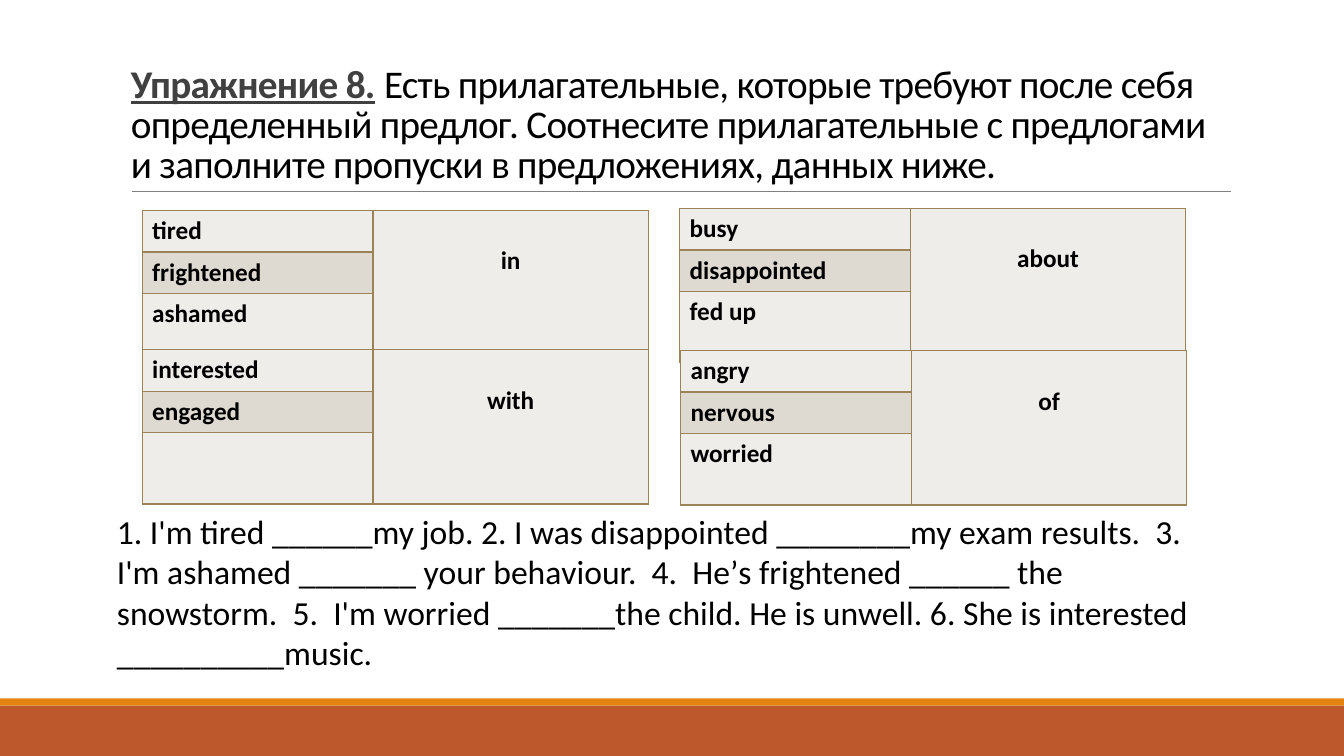
from lxml import etree
from pptx import Presentation
from pptx.dml.color import RGBColor
from pptx.enum import shapes, text
from pptx.oxml import ns
from pptx.util import Inches, Pt

# Content
HEADING = [
    ("Упражнение 8.", {"bold": True, "underline": True}, "404040"),
    (" ", {}, "404040"),
    ("Есть прилагательные, которые требуют после себя определенный предлог. "
     "Соотнесите прилагательные с предлогами и заполните пропуски в "
     "предложениях, данных ниже.", {}, "000000"),
]
SENTENCES = (
    "1. I'm tired ______my job. 2. I was disappointed ________my ехаm results.  3.  "
    "I'm ashamed _______ уоur bеhаviоur.  4.  Не’s frightened ______ the snowstorm.  "
    "5.  I'm worried _______the child. Hе is unwell. 6. Shе is interested __________music."
)
# Left, top, adjectives, preposition
GROUPS = [
    (1.41, 2.09, ["tired", "frightened", "ashamed"], "in"),
    (6.74, 2.07, ["busy", "disappointed", "fed up"], "about"),
    (6.75, 3.48, ["angry", "nеrvоus", "worried"], "of"),
    (1.41, 3.47, ["interested", "engaged", ""], "with"),
]
COLUMNS = [2.29, 2.73]
ROWS = [0.41, 0.41, 0.71]
BANDS = ["EFEDEA", "DED9D1", "EFEDEA"]
BORDER = "9B8357"
# Top, height, colour
FOOTER = [(7, 0.5, "BD582C"), (6.93, 0.07, "E48312")]


def color(value):
    return RGBColor.from_string(value)


def add_run(paragraph, words, size, shade="000000", **formats):
    run = paragraph.add_run()
    run.text = words
    formats = {"name": "Calibri", "size": Pt(size), **formats}
    for key, value in formats.items():
        setattr(run.font, key, value)
    run.font.color.rgb = color(shade)
    return run


def add_frame(left, top, width, height, **formats):
    box = slide.shapes.add_textbox(*map(Inches, (left, top, width, height)))
    for key, value in {"word_wrap": True, **formats}.items():
        setattr(box.text_frame, key, value)
    return box.text_frame.paragraphs[0]


def style_cell(cell, fill):
    properties = cell._tc.get_or_add_tcPr()
    for side in ("a:lnL", "a:lnR", "a:lnT", "a:lnB"):
        line = etree.SubElement(properties, ns.qn(side), w=str(Pt(1)))
        solid = etree.SubElement(line, ns.qn("a:solidFill"))
        etree.SubElement(solid, ns.qn("a:srgbClr"), val=BORDER)
    cell.fill.solid()
    cell.fill.fore_color.rgb = color(fill)


def add_group(left, top, adjectives, preposition):
    table = slide.shapes.add_table(
        len(ROWS), len(COLUMNS), Inches(left), Inches(top),
        Inches(sum(COLUMNS)), Inches(sum(ROWS))).table
    table.first_row = table.horz_banding = False
    for column, width in zip(table.columns, COLUMNS):
        column.width = Inches(width)
    for index, (adjective, height, band) in enumerate(zip(adjectives, ROWS, BANDS)):
        table.rows[index].height = Inches(height)
        style_cell(table.cell(index, 0), band)
        style_cell(table.cell(index, 1), BANDS[0])
        if adjective:
            add_run(table.cell(index, 0).text_frame.paragraphs[0], adjective, 18, bold=True)
    answer = table.cell(0, 1)
    answer.merge(table.cell(len(ROWS) - 1, 1))
    answer.margin_top = Inches(0.35)
    paragraph = answer.text_frame.paragraphs[0]
    paragraph.alignment = text.PP_ALIGN.CENTER
    add_run(paragraph, preposition, 18, bold=True)


presentation = Presentation()
presentation.slide_width, presentation.slide_height = Inches(13.33), Inches(7.5)
slide = presentation.slides.add_slide(presentation.slide_layouts[6])

# Footer bands
for top, height, shade in FOOTER:
    band = slide.shapes.add_shape(
        shapes.MSO_SHAPE.RECTANGLE, 0, Inches(top), presentation.slide_width, Inches(height))
    band.shadow.inherit = False
    band.fill.solid()
    band.fill.fore_color.rgb = color(shade)
    band.line.fill.background()

# Rule under the heading
rule = slide.shapes.add_connector(
    shapes.MSO_CONNECTOR.STRAIGHT, *map(Inches, (1.31, 1.9, 12.21, 1.9)))
rule.line.color.rgb = color("808080")
rule.line.width = Pt(0.5)
etree.SubElement(rule._element.spPr, ns.qn("a:effectLst"))

# Heading
heading = add_frame(1.2, 0.44, 11, 1.46, vertical_anchor=text.MSO_ANCHOR.BOTTOM)
heading.line_spacing = 0.85
for words, formats, shade in HEADING:
    run = add_run(heading, words, 28, shade, **formats)
    run.font._element.set("spc", "-50")

# Sentences
sentences = add_frame(1.16, 5.02, 10.9, 1.72, margin_left=0, margin_right=0)
add_run(sentences, SENTENCES, 24)

# Adjectives and prepositions
for group in GROUPS:
    add_group(*group)

presentation.save("out.pptx")
